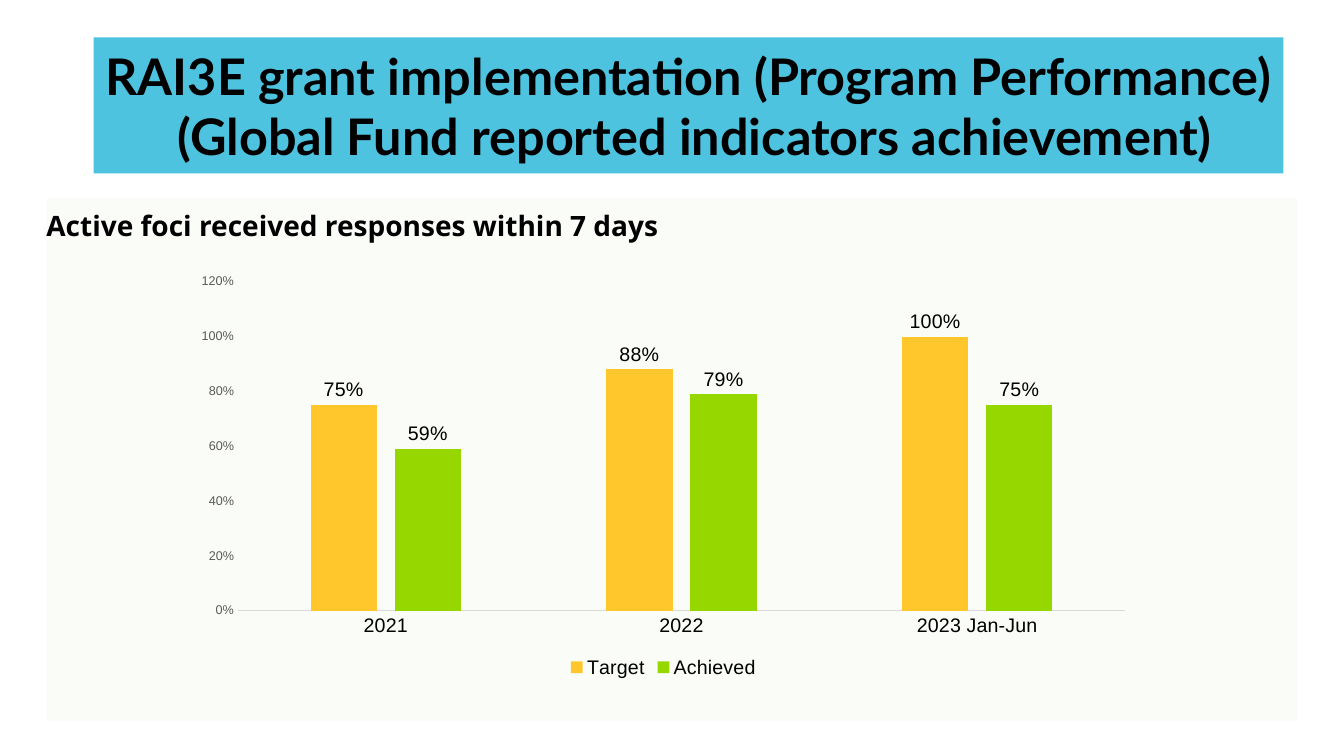
from pptx import Presentation
from pptx.chart.data import CategoryChartData
from pptx.dml.color import RGBColor
from pptx.enum.chart import XL_CHART_TYPE as ChartType
from pptx.enum.chart import XL_LABEL_POSITION as LabelPosition
from pptx.enum.chart import XL_LEGEND_POSITION as LegendPosition
from pptx.enum.chart import XL_TICK_MARK as TickMark
from pptx.enum.shapes import MSO_SHAPE as ShapeType
from pptx.enum.text import MSO_ANCHOR as Anchor
from pptx.enum.text import PP_ALIGN as Align
from pptx.util import Inches, Pt

COLORS = {
    "title_band": "4EC3E0",
    "panel": "FAFCF7",
    "text": "000000",
    "axis_text": "595959",
    "axis_line": "D9D9D9",
    "target": "FFC72C",
    "achieved": "97D700",
}
YEARS = ["2021", "2022", "2023 Jan-Jun"]
SERIES = [
    ("Target", "target", (0.75, 0.88, 1)),
    ("Achieved", "achieved", (0.59, 0.79, 0.75)),
]


def color(name):
    return RGBColor.from_string(COLORS[name])


def format_font(font, size, name="Arial", bold=False, fill="text"):
    font.name = name
    font.size = Pt(size)
    font.bold = bold
    font.color.rgb = color(fill)


def add_rectangle(slide, box, fill):
    shape = slide.shapes.add_shape(ShapeType.RECTANGLE, *map(Inches, box))
    shape.shadow.inherit = False
    shape.fill.solid()
    shape.fill.fore_color.rgb = color(fill)
    shape.line.fill.background()
    return shape


def write_text(shape, lines, align=Align.LEFT, anchor=Anchor.TOP, spacing=None, **font_format):
    frame = shape.text_frame
    frame.word_wrap = True
    frame.vertical_anchor = anchor
    frame.margin_left = frame.margin_right = 0
    frame.margin_top = frame.margin_bottom = 0
    for index, line in enumerate(lines):
        paragraph = frame.add_paragraph() if index else frame.paragraphs[0]
        paragraph.alignment = align
        paragraph.line_spacing = spacing
        run = paragraph.add_run()
        run.text = line
        format_font(run.font, **font_format)


def add_title(slide, box):
    band = add_rectangle(slide, box, "title_band")
    lines = [
        "RAI3E grant implementation (Program Performance)",
        " (Global Fund reported indicators achievement)",
    ]
    write_text(band, lines, align=Align.CENTER, anchor=Anchor.MIDDLE,
               size=36, name="Lato", bold=True)


def add_response_chart(slide, box):
    data = CategoryChartData(number_format="0%")
    data.categories = YEARS
    for name, _, values in SERIES:
        data.add_series(name, values)
    chart = slide.shapes.add_chart(ChartType.COLUMN_CLUSTERED, *map(Inches, box), data).chart
    format_font(chart.font, 10)
    chart.has_title = False
    chart.has_legend = True
    chart.legend.position = LegendPosition.BOTTOM
    chart.legend.include_in_layout = False
    format_font(chart.legend.font, 14)

    years = chart.category_axis
    years.major_tick_mark = TickMark.NONE
    years.format.line.color.rgb = color("axis_line")
    years.format.line.width = Pt(0.75)
    format_font(years.tick_labels.font, 14)

    percent = chart.value_axis
    percent.minimum_scale, percent.maximum_scale, percent.major_unit = 0, 1.2, 0.2
    percent.major_tick_mark = TickMark.NONE
    percent.has_major_gridlines = False
    percent.format.line.fill.background()
    percent.tick_labels.number_format = "0%"
    percent.tick_labels.number_format_is_linked = False
    format_font(percent.tick_labels.font, 9, fill="axis_text")

    plot = chart.plots[0]
    plot.gap_width = 219
    plot.overlap = -27
    plot.vary_by_categories = False
    for series, (_, fill, _) in zip(plot.series, SERIES):
        series.format.fill.solid()
        series.format.fill.fore_color.rgb = color(fill)
        series.invert_if_negative = False
        labels = series.data_labels
        labels.show_value = True
        labels.position = LabelPosition.OUTSIDE_END
        labels.number_format = "0%"
        labels.number_format_is_linked = False
        format_font(labels.font, 14)


def add_response_panel(slide, box):
    left, top, _, _ = box
    panel = add_rectangle(slide, box, "panel")
    write_text(panel, ["Active foci received responses within 7 days"],
               spacing=1.3, size=20, name="Open Sans", bold=True)
    add_response_chart(slide, (left + 1.35, top + 0.67, 9.54, 4.13))


def main():
    presentation = Presentation()
    presentation.slide_width = Inches(13.33)
    presentation.slide_height = Inches(7.5)
    slide = presentation.slides.add_slide(presentation.slide_layouts[6])
    add_title(slide, (0.93, 0.37, 11.8, 1.35))
    add_response_panel(slide, (0.46, 1.97, 12.41, 5.18))
    presentation.save("out.pptx")


if __name__ == "__main__":
    main()
